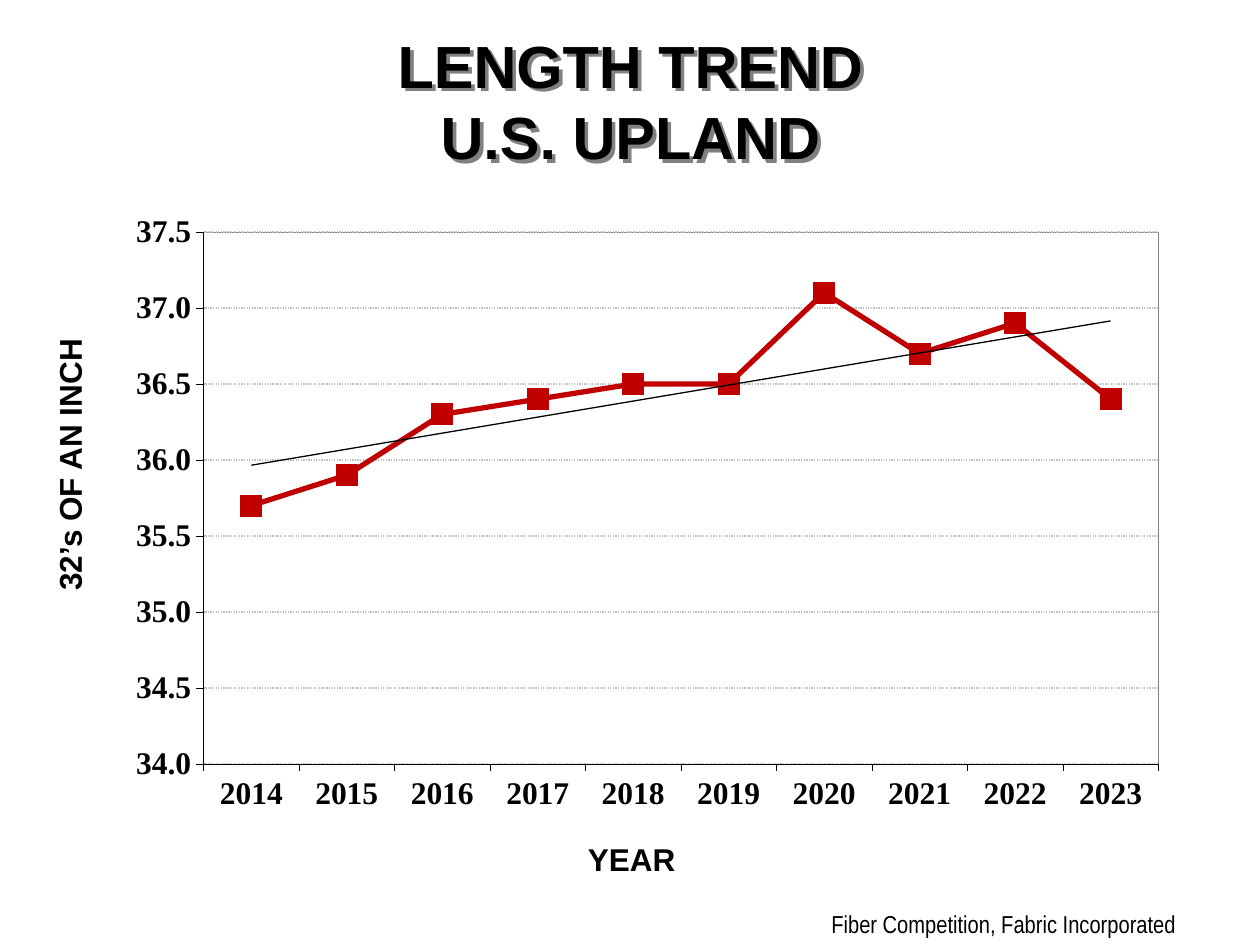
import pptx
import pptx.chart.data
import pptx.dml.color
import pptx.enum.chart
import pptx.enum.dml
import pptx.enum.text
import pptx.oxml
import pptx.oxml.ns
import pptx.util

SCALE = 914400 / 126
BLACK, RED, GREY = "000000", "C00000", "BFBFBF"
NAMESPACES = pptx.oxml.ns.nsdecls("c", "a")
PLOT_FRAME = {"x": 0.141, "y": 0.221, "w": 0.803, "h": 0.616}


def px(length):
    return pptx.util.Emu(round(length * SCALE))


def color(code):
    return pptx.dml.color.RGBColor.from_string(code)


def apply(target, values):
    for name, value in values.items():
        setattr(target, name, value)


def parse_xml(text):
    return pptx.oxml.parse_xml(text)


class Page:
    def __init__(self, deck):
        self.slide = deck.slides.add_slide(deck.slide_layouts[6])

    def style_font(self, font, size, name, bold=False):
        apply(font, {"size": pptx.util.Pt(size), "name": name, "bold": bold})
        font.color.rgb = color(BLACK)

    def style_line(self, line, code, width):
        line.color.rgb = color(code)
        line.width = pptx.util.Pt(width)

    def text(self, place, lines, size, font="Arial", bold=True, shadow=False,
             rotation=0, frame_format=None, para_format=None):
        box = self.slide.shapes.add_textbox(*map(px, place))
        box.rotation = rotation
        apply(box.text_frame, {"word_wrap": True, **(frame_format or {})})
        para = box.text_frame.paragraphs[0]
        apply(para, para_format or {})
        for number, line in enumerate(lines):
            if number:
                para.add_line_break()
            span = para.add_run()
            span.text = line
            self.style_font(span.font, size, font, bold)
        if shadow:
            self.add_shadow(box)

    def add_shadow(self, box):
        # An unfilled box casts the shadow of its letters
        box._element.spPr.append(parse_xml(
            f'<a:effectLst {NAMESPACES}><a:outerShdw dist="38100" dir="2700000">'
            '<a:srgbClr val="808080"/></a:outerShdw></a:effectLst>'))

    def style_axis(self, axis):
        axis.major_tick_mark = pptx.enum.chart.XL_TICK_MARK.OUTSIDE
        axis.minor_tick_mark = pptx.enum.chart.XL_TICK_MARK.NONE
        self.style_font(axis.tick_labels.font, 18, "Times New Roman", True)
        self.style_line(axis.format.line, BLACK, 0.25)

    def line_chart(self, place, years, values):
        data = pptx.chart.data.CategoryChartData(number_format="0.0")
        data.categories = years
        data.add_series("Series 1", values)
        chart = self.slide.shapes.add_chart(
            pptx.enum.chart.XL_CHART_TYPE.LINE_MARKERS, *map(px, place), data).chart
        apply(chart, {"has_title": False, "has_legend": False})
        self.style_font(chart.font, 10, "Times New Roman")
        chart.plots[0].vary_by_categories = False

        # Axes
        self.style_axis(chart.category_axis)
        axis = chart.value_axis
        self.style_axis(axis)
        apply(axis, {"minimum_scale": 34, "maximum_scale": 37.5,
                     "major_unit": 0.5, "has_major_gridlines": True})
        apply(axis.tick_labels, {"number_format": "0.0",
                                 "number_format_is_linked": False})
        grid = axis.major_gridlines.format.line
        self.style_line(grid, GREY, 0.75)
        grid.dash_style = pptx.enum.dml.MSO_LINE.ROUND_DOT

        # Series
        series = chart.plots[0].series[0]
        series.smooth = False
        self.style_line(series.format.line, RED, 3)
        apply(series.marker, {"style": pptx.enum.chart.XL_MARKER_STYLE.SQUARE,
                              "size": 12})
        series.marker.format.fill.solid()
        series.marker.format.fill.fore_color.rgb = color(RED)
        self.style_line(series.marker.format.line, RED, 0.75)
        self.add_trend_line(series)
        self.frame_plot(chart)

    def add_trend_line(self, series):
        series._element.find(pptx.oxml.ns.qn("c:cat")).addprevious(parse_xml(
            f'<c:trendline {NAMESPACES}><c:spPr><a:ln w="9525"><a:solidFill>'
            f'<a:srgbClr val="{BLACK}"/></a:solidFill></a:ln></c:spPr>'
            '<c:trendlineType val="linear"/><c:dispRSqr val="0"/>'
            '<c:dispEq val="0"/></c:trendline>'))

    def frame_plot(self, chart):
        body = chart._chartSpace.find(pptx.oxml.ns.qn("c:chart"))
        body.addnext(parse_xml(f'<c:spPr {NAMESPACES}><a:noFill/><a:ln><a:noFill/>'
                               '</a:ln></c:spPr>'))
        area = body.find(pptx.oxml.ns.qn("c:plotArea"))
        for layout in area.findall(pptx.oxml.ns.qn("c:layout")):
            area.remove(layout)
        modes = "".join(f'<c:{side}Mode val="edge"/>' for side in "xy")
        sizes = "".join(f'<c:{side} val="{value}"/>'
                        for side, value in PLOT_FRAME.items())
        area.insert(0, parse_xml(
            f'<c:layout {NAMESPACES}><c:manualLayout><c:layoutTarget val="inner"/>'
            f'{modes}{sizes}</c:manualLayout></c:layout>'))
        area.append(parse_xml(
            f'<c:spPr {NAMESPACES}><a:noFill/><a:ln w="3175"><a:solidFill>'
            '<a:srgbClr val="808080"/></a:solidFill></a:ln></c:spPr>'))


def main():
    deck = pptx.Presentation()
    apply(deck, {"slide_width": px(1260), "slide_height": px(945)})
    page = Page(deck)

    # Title
    page.text((95, 21, 1071, 158), ["LENGTH TREND", "U.S. UPLAND"], 34, shadow=True,
              frame_format={"vertical_anchor": pptx.enum.text.MSO_ANCHOR.MIDDLE},
              para_format={"alignment": pptx.enum.text.PP_ALIGN.CENTER})

    # Axis names
    tight = {"margin_left": 0, "margin_top": 0, "margin_right": 0, "margin_bottom": 0}
    page.text((-62, 440, 263, 38), ["32’s OF AN INCH"], 18, rotation=270,
              frame_format=tight)
    page.text((588, 840, 100, 38), ["YEAR"], 18, frame_format=tight)

    # Source line
    page.text((819, 903, 441, 42), ["Fiber Competition, Fabric Incorporated"], 14,
              font="Arial Narrow", bold=False)

    # Fiber length by year
    page.line_chart((36, 41, 1189, 864), [str(year) for year in range(2014, 2024)],
                    [35.7, 35.9, 36.3, 36.4, 36.5, 36.5, 37.1, 36.7, 36.9, 36.4])

    deck.save("out.pptx")


if __name__ == "__main__":
    main()
